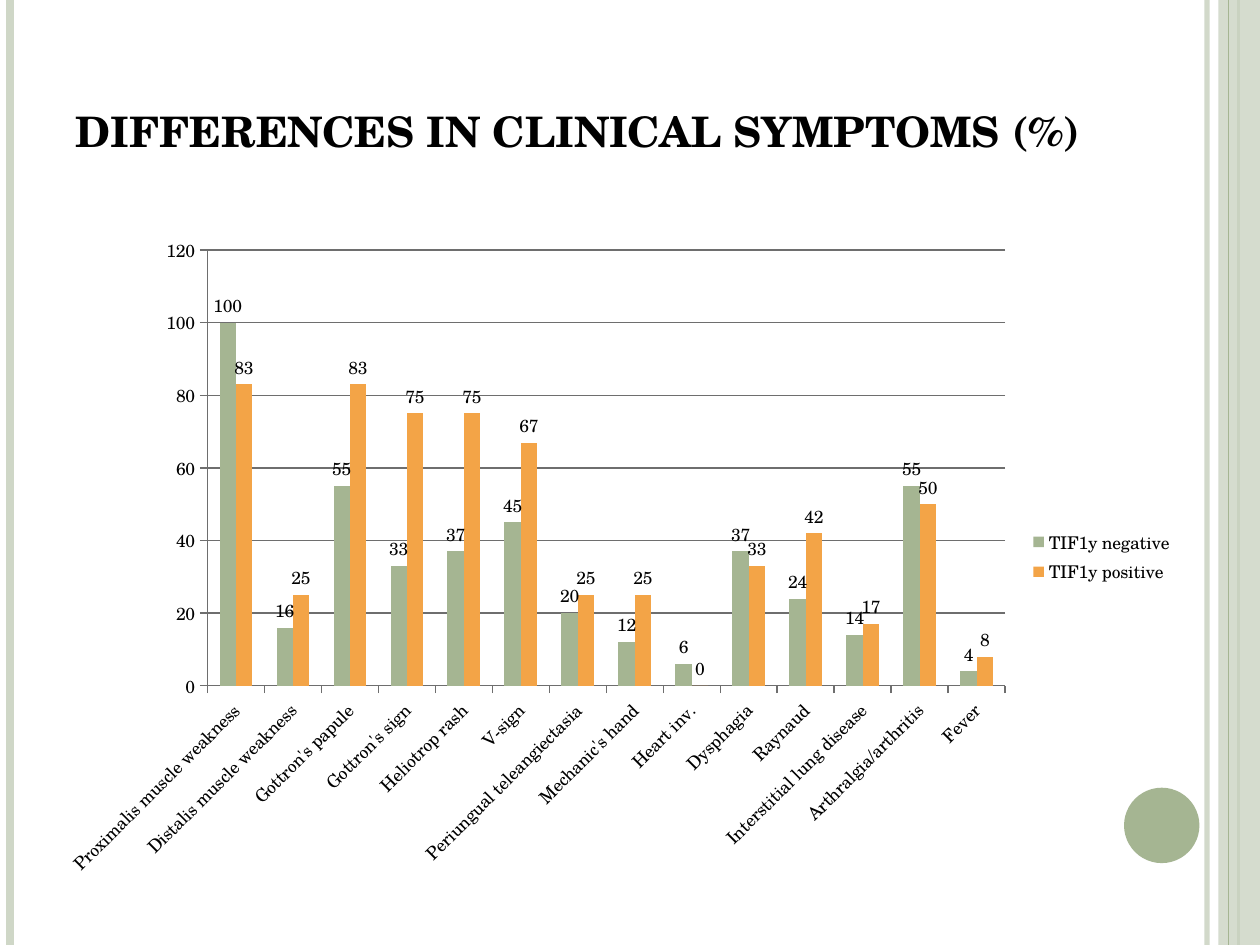
from pptx import Presentation
from pptx.chart.data import CategoryChartData
from pptx.dml.color import RGBColor
from pptx.enum.chart import XL_CHART_TYPE as ChartType, XL_LABEL_POSITION as LabelPosition
from pptx.enum.chart import XL_LEGEND_POSITION as LegendPosition, XL_TICK_MARK as TickMark
from pptx.enum.shapes import MSO_CONNECTOR as Connector, MSO_SHAPE as Shape
from pptx.enum.text import MSO_ANCHOR as Anchor, MSO_AUTO_SIZE as AutoSize, PP_ALIGN as Align
from pptx.oxml.ns import qn
from pptx.util import Cm, Pt
from lxml.etree import SubElement

FONT = "TeX Gyre Schola"
BLACK, GREY = "000000", "6E6E6E"
SAGE, PALE_SAGE, ORANGE = "A5B592", "CFD7C7", "F3A447"
WIDTH, HEIGHT = 25.4, 19.05

# symptom, TIF1y negative, TIF1y positive
SYMPTOMS = [
    ("Proximalis muscle weakness", 100, 83),
    ("Distalis muscle weakness", 16, 25),
    ("Gottron's papule", 55, 83),
    ("Gottron's sign", 33, 75),
    ("Heliotrop rash", 37, 75),
    ("V-sign", 45, 67),
    ("Periungual teleangiectasia", 20, 25),
    ("Mechanic's hand", 12, 25),
    ("Heart inv.", 6, 0),
    ("Dysphagia", 37, 33),
    ("Raynaud", 24, 42),
    ("Interstitial lung disease", 14, 17),
    ("Arthralgia/arthritis", 55, 50),
    ("Fever", 4, 8),
]


def rgb(color):
    return RGBColor.from_string(color)


def set_alpha(element, percent):
    color = next(element.iter(qn("a:srgbClr")))
    SubElement(color, qn("a:alpha")).set("val", str(percent * 1000))


def add_stripe(slide, x, color, weight, opacity=100):
    """Draw a vertical line over the full height of the slide."""
    stripe = slide.shapes.add_connector(Connector.STRAIGHT, Cm(x), 0, Cm(x), Cm(HEIGHT))
    stripe.line.color.rgb = rgb(color)
    stripe.line.width = Pt(weight)
    properties = stripe._element.spPr
    if opacity < 100:
        set_alpha(properties, opacity)
    SubElement(properties, qn("a:effectLst"))


def add_block(slide, kind, left, top, width, height, color, opacity=100):
    block = slide.shapes.add_shape(kind, Cm(left), Cm(top), Cm(width), Cm(height))
    block.shadow.inherit = False
    block.fill.solid()
    block.fill.fore_color.rgb = rgb(color)
    block.line.fill.background()
    if opacity < 100:
        set_alpha(block._element.spPr, opacity)


def add_frame(slide):
    add_stripe(slide, 24.33, PALE_SAGE, 3, 93)
    add_stripe(slide, 0.2, PALE_SAGE, 4.5)
    add_stripe(slide, 24.97, SAGE, 1.5)
    add_block(slide, Shape.RECTANGLE, 24.56, 0, WIDTH - 24.56, HEIGHT, PALE_SAGE, 87)
    add_stripe(slide, 24.77, SAGE, 0.75)
    add_block(slide, Shape.OVAL, 22.66, 15.88, 1.52, 1.52, SAGE)


def set_title(slide, text):
    title = slide.shapes.title
    title.left, title.top, title.width, title.height = Cm(1.27), Cm(0.13), Cm(21.64), Cm(3.18)
    frame = title.text_frame
    frame.text = text
    frame.word_wrap = True
    frame.auto_size = AutoSize.NONE
    frame.vertical_anchor = Anchor.BOTTOM
    para = frame.paragraphs[0]
    para.alignment = Align.LEFT
    span = para.runs[0]
    span.font.name, span.font.size, span.font.bold = FONT, Pt(30), True
    span.font.color.rgb = rgb(BLACK)
    span.font._element.set("cap", "small")


def style_axis(axis):
    axis.major_tick_mark = TickMark.OUTSIDE
    axis.minor_tick_mark = TickMark.NONE
    axis.format.line.color.rgb = rgb(GREY)
    axis.format.line.width = Pt(0.75)


def style_series(series, color):
    series.format.fill.solid()
    series.format.fill.fore_color.rgb = rgb(color)
    labels = series.data_labels
    labels.show_value = True
    labels.number_format, labels.number_format_is_linked = "0", False
    labels.position = LabelPosition.OUTSIDE_END


def place_plot(chart, **fractions):
    """Fix the inner plot area, given as fractions of the chart."""
    area = chart._chartSpace.chart.plotArea
    for old in area.findall(qn("c:layout")):
        area.remove(old)
    layout = SubElement(area, qn("c:layout"))
    area.insert(0, layout)
    manual = SubElement(layout, qn("c:manualLayout"))
    settings = {"layoutTarget": "inner", "xMode": "edge", "yMode": "edge", **fractions}
    for name, value in settings.items():
        SubElement(manual, qn(f"c:{name}")).set("val", str(value))


def add_symptom_chart(slide):
    names, negative, positive = zip(*SYMPTOMS)
    data = CategoryChartData(number_format="0")
    data.categories = names
    data.add_series("TIF1y negative", negative)
    data.add_series("TIF1y positive", positive)
    chart = slide.shapes.add_chart(
        ChartType.COLUMN_CLUSTERED, Cm(0.89), Cm(4.52), Cm(23.01), Cm(13.41), data
    ).chart
    chart.has_title = False
    chart.font.name, chart.font.size = FONT, Pt(10)
    chart.font.color.rgb = rgb(BLACK)

    plot = chart.plots[0]
    plot.gap_width, plot.overlap = 150, 0
    plot.vary_by_categories = False
    for series, color in zip(plot.series, (SAGE, ORANGE)):
        style_series(series, color)

    category_axis, value_axis = chart.category_axis, chart.value_axis
    style_axis(category_axis)
    style_axis(value_axis)
    category_axis.tick_labels.font.size = Pt(10)
    category_axis._element.txPr.bodyPr.set("rot", str(-45 * 60000))
    value_axis.minimum_scale, value_axis.maximum_scale, value_axis.major_unit = 0, 120, 20
    value_axis.tick_labels.number_format = "0"
    value_axis.tick_labels.number_format_is_linked = False
    grid_line = value_axis.major_gridlines.format.line
    grid_line.color.rgb, grid_line.width = rgb(GREY), Pt(0.75)

    chart.has_legend = True
    chart.legend.position = LegendPosition.RIGHT
    chart.legend.include_in_layout = False
    place_plot(chart, x=0.143, y=0.039, w=0.699, h=0.655)


def main():
    deck = Presentation()
    deck.slide_width, deck.slide_height = Cm(WIDTH), Cm(HEIGHT)
    slide = deck.slides.add_slide(deck.slide_layouts[5])
    add_frame(slide)
    set_title(slide, "differences in clinical symptoms (%)")
    add_symptom_chart(slide)
    deck.save("out.pptx")


if __name__ == "__main__":
    main()
